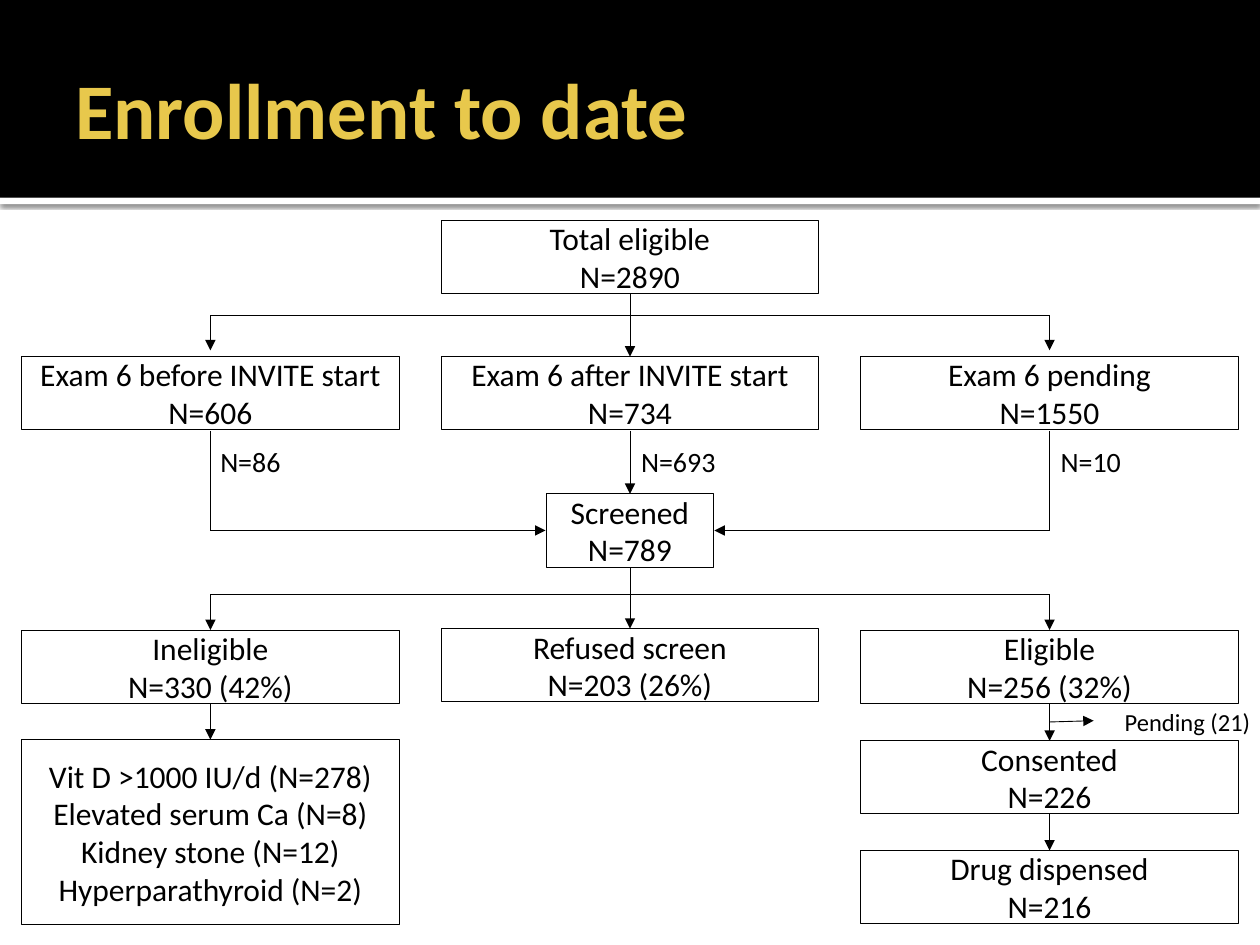
from typing import NamedTuple

from lxml.etree import SubElement
from pptx import Presentation
from pptx.dml.color import RGBColor
from pptx.enum.shapes import MSO_CONNECTOR, MSO_SHAPE
from pptx.enum.text import MSO_ANCHOR, PP_ALIGN
from pptx.oxml.ns import qn
from pptx.util import Inches, Pt

FONT = "Calibri"
BLACK, WHITE, GOLD = "000000", "FFFFFF", "E8C84C"
LEFT, MID, RIGHT = 1.67, 5, 8.33
WIDE, HIGH = 3, 0.58


class Box(NamedTuple):
    mid: float
    top: float
    lines: tuple[str, ...]
    width: float = WIDE
    height: float = HIGH


class Label(NamedTuple):
    left: float
    top: float
    width: float
    height: float
    text: str
    size: float = 16
    align: PP_ALIGN = PP_ALIGN.LEFT
    color: str = BLACK
    bold: bool = False


class Line(NamedTuple):
    x1: float
    y1: float
    x2: float
    y2: float
    arrow: bool = True


BOXES = [
    Box(MID, 1.75, ("Total eligible", "N=2890")),
    Box(LEFT, 2.83, ("Exam 6 before INVITE start", "N=606")),
    Box(MID, 2.83, ("Exam 6 after INVITE start", "N=734")),
    Box(RIGHT, 2.83, ("Exam 6 pending", "N=1550")),
    Box(MID, 3.92, ("Screened", "N=789"), 1.33),
    Box(LEFT, 5, ("Ineligible", "N=330 (42%)")),
    Box(MID, 4.99, ("Refused screen", "N=203 (26%)")),
    Box(RIGHT, 5, ("Eligible", "N=256 (32%)")),
    Box(RIGHT, 5.88, ("Consented", "N=226")),
    Box(RIGHT, 6.75, ("Drug dispensed", "N=216")),
    Box(LEFT, 5.87, ("Vit D >1000 IU/d (N=278)", "Elevated serum Ca (N=8)",
                      "Kidney stone (N=12)", "Hyperparathyroid (N=2)"), height=1.47),
]

LABELS = [
    Label(0.5, 0.17, 9, 1.37, "Enrollment to date", 45, color=GOLD, bold=True),
    Label(1.65, 3.52, 0.84, 0.29, "N=86"),
    Label(4.99, 3.52, 0.84, 0.29, "N=693"),
    Label(8.32, 3.52, 0.84, 0.29, "N=10"),
    Label(8.68, 5.58, 1.49, 0.29, "Pending (21)", 14, PP_ALIGN.CENTER),
]

LINES = [
    Line(MID, 2.33, MID, 2.83),
    Line(MID, 3.42, MID, 3.92),
    Line(MID, 4.5, MID, 4.99),
    Line(LEFT, 5.58, LEFT, 5.87),
    Line(RIGHT, 5.58, RIGHT, 5.88),
    Line(RIGHT, 6.46, RIGHT, 6.75),
    Line(RIGHT, 5.73, 8.68, 5.72),
]
for bar, tip in ((2.5, 2.78), (4.72, 5)):
    LINES.append(Line(LEFT, bar, RIGHT, bar, False))
    LINES += [Line(x, bar, x, tip) for x in (LEFT, RIGHT)]
for x, edge in ((LEFT, 4.33), (RIGHT, 5.67)):
    LINES += [Line(x, 3.42, x, 4.21, False), Line(x, 4.21, edge, 4.21)]


def paint(color: str) -> RGBColor:
    """Turn a hex string into a colour."""
    return RGBColor.from_string(color)


def write(frame, lines: tuple[str, ...], size: float, align: PP_ALIGN,
          color: str = BLACK, bold: bool = False) -> None:
    """Fill a text frame with one paragraph per line."""
    frame.word_wrap = True
    frame.vertical_anchor = MSO_ANCHOR.MIDDLE
    for i, line in enumerate(lines):
        para = frame.add_paragraph() if i else frame.paragraphs[0]
        para.alignment = align
        run = para.add_run()
        run.text = line
        run.font.name, run.font.size, run.font.bold = FONT, Pt(size), bold
        run.font.color.rgb = paint(color)


def draw_band(slide, top: float, height: float, color: str):
    """Draw a full-width band."""
    band = slide.shapes.add_shape(
        MSO_SHAPE.RECTANGLE, 0, Inches(top), Inches(10), Inches(height))
    band.shadow.inherit = False
    band.fill.solid()
    band.fill.fore_color.rgb = paint(color)
    band.line.fill.background()
    return band


def add_shade(shape) -> None:
    """Give a shape a soft shadow straight below it."""
    effects = shape._element.spPr.find(qn("a:effectLst"))
    shade = SubElement(effects, qn("a:outerShdw"), blurRad=str(Pt(2.5)),
                       dist=str(Pt(0.8)), dir="5400000", algn="tl", rotWithShape="0")
    tone = SubElement(shade, qn("a:srgbClr"), val=BLACK)
    SubElement(tone, qn("a:alpha"), val="60000")


def draw_box(slide, box: Box) -> None:
    """Draw an outlined box with centred text."""
    shape = slide.shapes.add_shape(
        MSO_SHAPE.RECTANGLE, Inches(box.mid - box.width / 2), Inches(box.top),
        Inches(box.width), Inches(box.height))
    shape.shadow.inherit = False
    shape.fill.background()
    shape.line.color.rgb = paint(BLACK)
    shape.line.width = Pt(0.5)
    write(shape.text_frame, box.lines, 18, PP_ALIGN.CENTER)


def draw_label(slide, label: Label) -> None:
    """Draw free-standing text."""
    area = slide.shapes.add_textbox(
        Inches(label.left), Inches(label.top), Inches(label.width), Inches(label.height))
    write(area.text_frame, (label.text,), label.size, label.align, label.color, label.bold)


def draw_line(slide, line: Line) -> None:
    """Draw a thin line, with an arrowhead if asked."""
    link = slide.shapes.add_connector(
        MSO_CONNECTOR.STRAIGHT, Inches(line.x1), Inches(line.y1),
        Inches(line.x2), Inches(line.y2))
    link.line.color.rgb = paint(BLACK)
    link.line.width = Pt(0.5)
    if line.arrow:
        SubElement(link.line._get_or_add_ln(), qn("a:tailEnd"), type="triangle")
    SubElement(link._element.spPr, qn("a:effectLst"))


def main() -> None:
    """Build the enrollment slide and save it."""
    deck = Presentation()
    deck.slide_width, deck.slide_height = Inches(10), Inches(7.5)
    slide = deck.slides.add_slide(deck.slide_layouts[6])
    add_shade(draw_band(slide, 1.57, 0.05, WHITE))
    draw_band(slide, 0, 1.57, BLACK)
    for box in BOXES:
        draw_box(slide, box)
    for line in LINES:
        draw_line(slide, line)
    for label in LABELS:
        draw_label(slide, label)
    deck.save("out.pptx")


if __name__ == "__main__":
    main()
